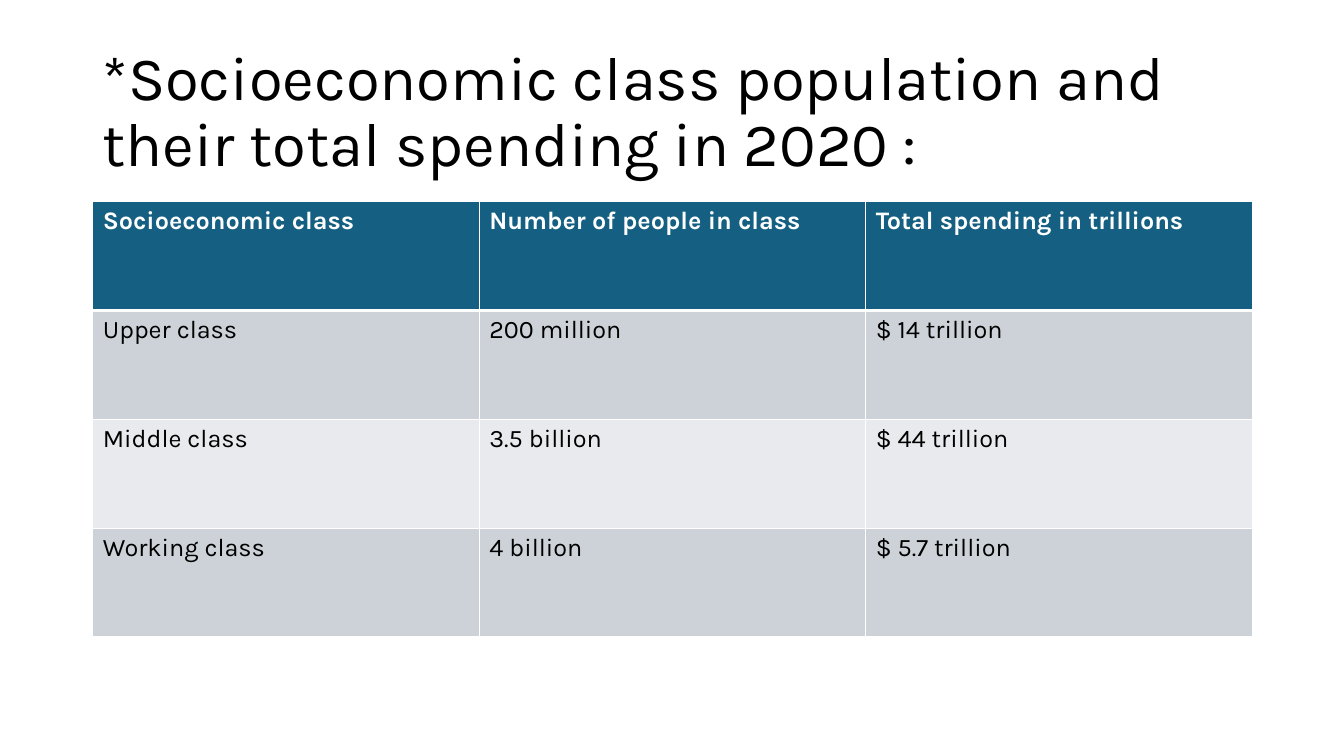
import dataclasses

import lxml.etree
import pptx
import pptx.dml.color
import pptx.enum.text
import pptx.oxml.ns
import pptx.util

PX = 9144
WHITE = pptx.dml.color.RGBColor(0xFF, 0xFF, 0xFF)
BLACK = pptx.dml.color.RGBColor(0x00, 0x00, 0x00)
BLUE = pptx.dml.color.RGBColor(0x15, 0x60, 0x82)
DARK = pptx.dml.color.RGBColor(0xCC, 0xD2, 0xD8)
LIGHT = pptx.dml.color.RGBColor(0xE8, 0xEA, 0xED)

LEFT, WIDE = 92, 1150
TOP, HIGH = 200, 108
TITLE = "*Socioeconomic class population and their total spending in 2020 :"


@dataclasses.dataclass(frozen=True)
class Row:
    """One table row: its texts, colours, weight and top and bottom rules in points."""

    texts: tuple[str, ...]
    fill: pptx.dml.color.RGBColor
    ink: pptx.dml.color.RGBColor = BLACK
    bold: bool = False
    top: int = 1
    base: int = 1


ROWS = (
    Row(("Socioeconomic class", "Number of people in class", "Total spending in trillions"),
        BLUE, WHITE, bold=True, base=3),
    Row(("Upper class", "200 million", "$ 14 trillion"), DARK, top=3),
    Row(("Middle class", "3.5 billion", "$ 44 trillion"), LIGHT),
    Row(("Working class", "4 billion", "$ 5.7 trillion"), DARK),
)


def px(size: int) -> pptx.util.Emu:
    return pptx.util.Emu(size * PX)


def put(item: object, form: dict[str, object]) -> None:
    for key, value in form.items():
        setattr(item, key, value)


def write(frame, text: str, size: int, ink: pptx.dml.color.RGBColor, bold: bool = False) -> None:
    part = frame.paragraphs[0]
    run = part.add_run()
    run.text = text
    put(run.font, {"name": "Karla", "size": pptx.util.Pt(size), "bold": bold})
    run.font.color.rgb = ink


def edge(cell, side: str, width: int) -> None:
    name = pptx.oxml.ns.qn
    props = cell._tc.get_or_add_tcPr()
    line = lxml.etree.SubElement(props, name(f"a:ln{side}"), w=str(pptx.util.Pt(width)))
    fill = lxml.etree.SubElement(line, name("a:solidFill"))
    lxml.etree.SubElement(fill, name("a:srgbClr"), val=str(WHITE))


def draw_title(slide) -> None:
    frame = slide.shapes.add_textbox(px(LEFT), px(40), px(WIDE), px(145)).text_frame
    put(frame, {"word_wrap": True, "vertical_anchor": pptx.enum.text.MSO_ANCHOR.MIDDLE})
    frame.paragraphs[0].line_spacing = 0.9
    write(frame, TITLE, 44, BLACK)


def draw_table(slide, rows: tuple[Row, ...]) -> None:
    table = slide.shapes.add_table(
        len(rows), len(rows[0].texts), px(LEFT), px(TOP), px(WIDE), px(HIGH * len(rows))
    ).table
    for i, row in enumerate(rows):
        for j, text in enumerate(row.texts):
            cell = table.cell(i, j)
            for side, width in {"L": 1, "R": 1, "T": row.top, "B": row.base}.items():
                edge(cell, side, width)
            cell.fill.solid()
            cell.fill.fore_color.rgb = row.fill
            write(cell.text_frame, text, 18, row.ink, row.bold)


def main() -> None:
    """Build the slide on class size and spending."""
    deck = pptx.Presentation()
    put(deck, {"slide_width": px(1333), "slide_height": px(750)})
    slide = deck.slides.add_slide(deck.slide_layouts[6])
    draw_title(slide)
    draw_table(slide, ROWS)
    deck.save("out.pptx")


if __name__ == "__main__":
    main()
